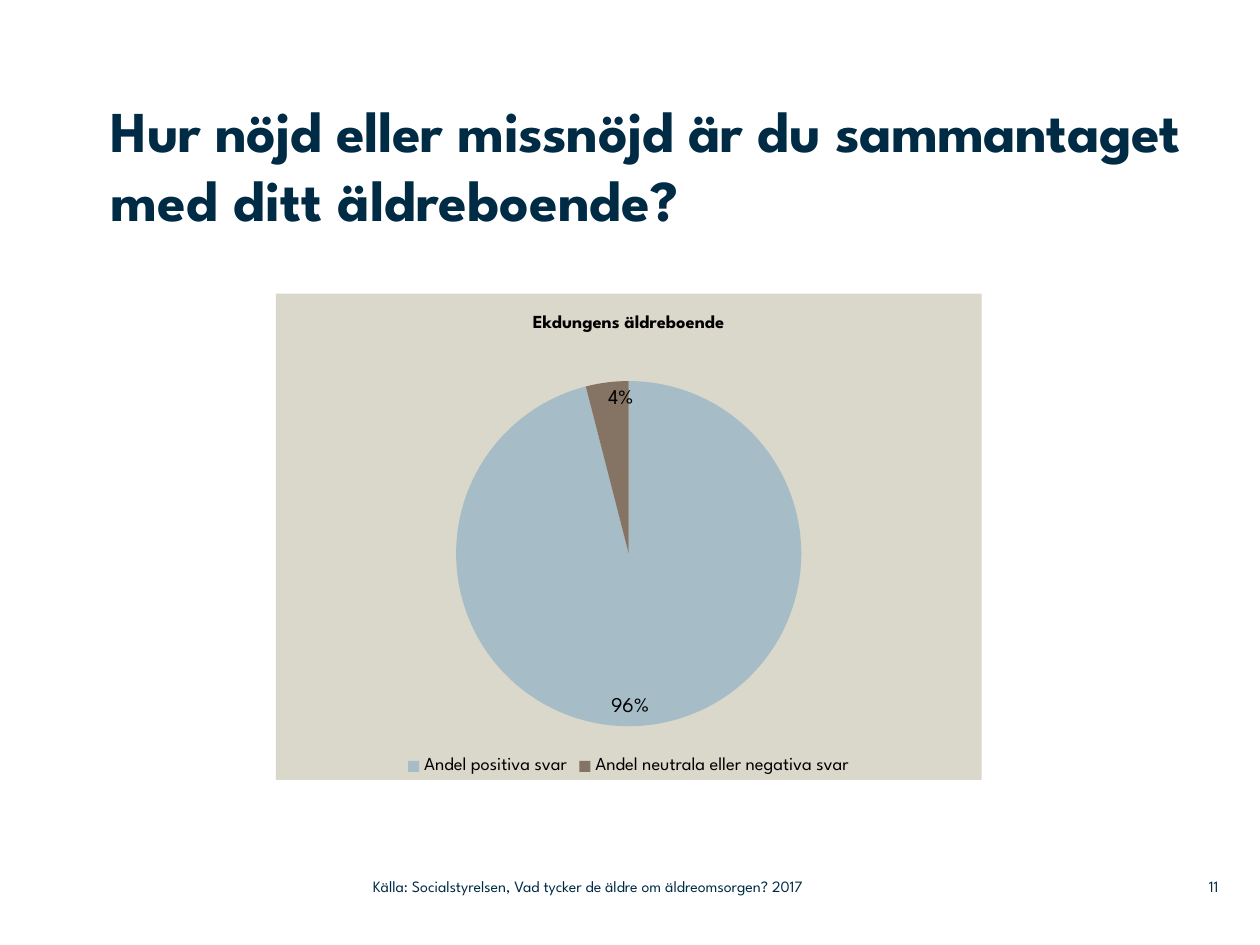
"""Build the slide on overall satisfaction with the care home."""
from lxml.etree import SubElement
from pptx import Presentation
from pptx.chart.data import CategoryChartData
from pptx.dml.color import RGBColor
from pptx.enum.chart import XL_CHART_TYPE, XL_LABEL_POSITION, XL_LEGEND_POSITION
from pptx.enum.text import MSO_ANCHOR, PP_ALIGN
from pptx.oxml import parse_xml
from pptx.oxml.ns import nsdecls, qn
from pptx.util import Inches, Pt

FONT = "League Spartan"
NAVY = RGBColor(0x00, 0x2B, 0x45)
BLACK = RGBColor(0x00, 0x00, 0x00)
SAND = RGBColor(0xDA, 0xD7, 0xCB)
BLUE = RGBColor(0xA6, 0xBC, 0xC6)
BROWN = RGBColor(0x85, 0x73, 0x63)

QUESTION = [("Hur nöjd eller missnöjd är du sammantaget ", -30), ("med ditt äldreboende?", 0)]
SOURCE = "Källa: Socialstyrelsen, Vad tycker de äldre om äldreomsorgen? 2017"
PAGE_NUMBER = "11"
CARE_HOME = "Ekdungens äldreboende"
ANSWERS = [
    ("Andel positiva svar", 96, BLUE),
    ("Andel neutrala eller negativa svar", 4, BROWN),
]
PIE_AREA = {"x": 0.25, "y": 0.18, "w": 0.5, "h": 0.71}


def style(font, size, color, bold=False):
    font.name, font.size, font.bold = FONT, Pt(size), bold
    font.color.rgb = color


def add_text(slide, box, pieces, size, bold=False, anchor=MSO_ANCHOR.MIDDLE, align=PP_ALIGN.LEFT):
    frame = slide.shapes.add_textbox(*map(Inches, box)).text_frame
    frame.word_wrap = True
    frame.vertical_anchor = anchor
    frame.margin_left = frame.margin_right = frame.margin_top = frame.margin_bottom = 0
    paragraph = frame.paragraphs[0]
    paragraph.alignment = align
    for text, spacing in pieces:
        run = paragraph.add_run()
        run.text = text
        style(run.font, size, NAVY, bold)
        if spacing:
            run.font._element.set("spc", str(spacing))


def add_answer_pie(slide, box):
    answers = CategoryChartData()
    answers.categories = [label for label, _, _ in ANSWERS]
    answers.add_series("Series 1", [share for _, share, _ in ANSWERS])
    chart = slide.shapes.add_chart(XL_CHART_TYPE.PIE, *map(Inches, box), answers).chart
    style(chart.font, 18, BLACK)

    chart.has_title = True
    chart.chart_title.text_frame.text = CARE_HOME
    style(chart.chart_title.text_frame.paragraphs[0].runs[0].font, 10.5, BLACK, True)
    chart.chart_title.include_in_layout = False

    chart.has_legend = True
    chart.legend.position = XL_LEGEND_POSITION.BOTTOM
    chart.legend.include_in_layout = False
    style(chart.legend.font, 10.5, BLACK)

    plot = chart.plots[0]
    plot.vary_by_categories = True
    for index, (_, _, color) in enumerate(ANSWERS):
        slice_fill = plot.series[0].points[index].format.fill
        slice_fill.solid()
        slice_fill.fore_color.rgb = color

    labels = plot.series[0].data_labels
    labels.show_value = False
    labels.show_percentage = True
    labels.number_format = "0%"
    labels.number_format_is_linked = False
    labels.position = XL_LABEL_POSITION.INSIDE_END
    style(labels.font, 12, BLACK)

    plot_area = chart._chartSpace.chart.plotArea
    for layout in plot_area.findall(qn("c:layout")):
        plot_area.remove(layout)
    layout = parse_xml(f"<c:layout {nsdecls('c')}/>")
    plot_area.insert(0, layout)
    manual = SubElement(layout, qn("c:manualLayout"))
    settings = {"layoutTarget": "inner", "xMode": "edge", "yMode": "edge", **PIE_AREA}
    for tag, value in settings.items():
        SubElement(manual, qn(f"c:{tag}")).set("val", str(value))

    background = parse_xml(
        f"<c:spPr {nsdecls('c', 'a')}><a:solidFill><a:srgbClr val=\"{SAND}\"/></a:solidFill>"
        "<a:ln><a:noFill/></a:ln></c:spPr>"
    )
    chart._chartSpace.chart.addnext(background)


def main():
    deck = Presentation()
    deck.slide_width, deck.slide_height = Inches(10), Inches(7.5)
    slide = deck.slides.add_slide(deck.slide_layouts[6])
    add_text(slide, (9.2, 6.89, 0.47, 0.29), [(PAGE_NUMBER, 0)], 9, align=PP_ALIGN.RIGHT)
    add_text(slide, (2.96, 6.89, 4.43, 0.29), [(SOURCE, 0)], 9)
    add_text(slide, (0.88, 0.75, 8.83, 1.42), QUESTION, 33, bold=True, anchor=MSO_ANCHOR.TOP)
    add_answer_pie(slide, (2.19, 2.33, 5.6, 3.86))
    deck.save("out.pptx")


if __name__ == "__main__":
    main()
